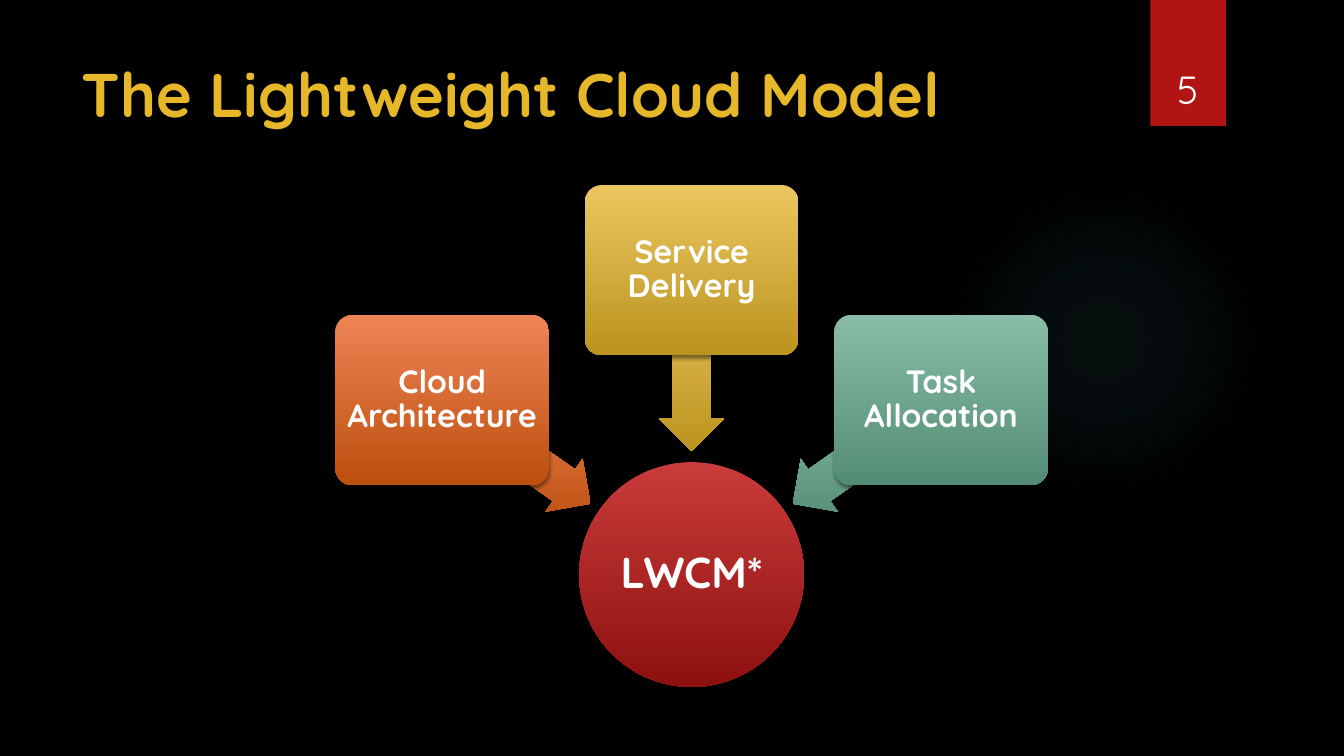
import math

import lxml.etree
import pptx
import pptx.dml.color
import pptx.enum.shapes
import pptx.enum.text
import pptx.oxml.ns
import pptx.util

Inches = pptx.util.Inches
SHAPE = pptx.enum.shapes.MSO_SHAPE
ANCHOR = pptx.enum.text.MSO_ANCHOR
ALIGN = pptx.enum.text.PP_ALIGN
qn = pptx.oxml.ns.qn

FONT = "Quicksand"
WHITE = "FFFFFF"
HUB_X, HUB_Y, HUB_SIZE = 6.86, 5.7, 2.23
BOX_W, BOX_H, BOX_RADIUS = 2.12, 1.69, 3.02
ARROW_W, ARROW_H, ARROW_RADIUS = 1.79, 0.64, 2.12
INPUTS = [
    ("Cloud Architecture", 215, "EE8455", "BC4F0E"),
    ("Service Delivery", 270, "EBC65F", "BB941F"),
    ("Task Allocation", 325, "89BDA7", "538C74"),
]


def rgb(color):
    return pptx.dml.color.RGBColor.from_string(color)


def sub(parent, tag, **attrs):
    return lxml.etree.SubElement(parent, qn(tag), {k: str(v) for k, v in attrs.items()})


def add_shape(slide, kind, x, y, w, h, adjustments=()):
    s = slide.shapes.add_shape(kind, Inches(x), Inches(y), Inches(w), Inches(h))
    for i, value in enumerate(adjustments):
        s.adjustments[i] = value
    s.line.fill.background()
    s.shadow.inherit = False
    return s


def add_centred(slide, kind, cx, cy, w, h, adjustments=()):
    return add_shape(slide, kind, cx - w / 2, cy - h / 2, w, h, adjustments)


def add_shadow(s):
    effects = s._element.spPr.find(qn("a:effectLst"))
    shadow = sub(effects, "a:outerShdw", blurRad=pptx.util.Pt(3),
                 dist=pptx.util.Pt(2), dir=5400000, rotWithShape=0)
    color = sub(shadow, "a:srgbClr", val="000000")
    sub(color, "a:alpha", val=45000)


def start_gradient(s, stops):
    s.fill.gradient()
    grad = s._element.spPr.find(qn("a:gradFill"))
    for child in list(grad):
        grad.remove(child)
    grad.set("rotWithShape", "0")
    stop_list = sub(grad, "a:gsLst")
    for position, color, alpha in stops:
        stop = sub(stop_list, "a:gs", pos=position * 1000)
        sub(sub(stop, "a:srgbClr", val=color), "a:alpha", val=alpha * 1000)
    return grad


def fill_vertical(s, top, bottom):
    grad = start_gradient(s, [(0, top, 100), (100, bottom, 100)])
    sub(grad, "a:lin", ang=5400000, scaled=0)


def fill_radial(s, stops):
    route = sub(start_gradient(s, stops), "a:path", path="circle")
    sub(route, "a:fillToRect", l=50000, t=50000, r=50000, b=50000)


def add_run(p, text, size, color, bold):
    r = p.add_run()
    r.text = text
    r.font.name = FONT
    r.font.size = pptx.util.Pt(size)
    r.font.bold = bold
    r.font.color.rgb = rgb(color)


def add_label(s, text, size, inset):
    tf = s.text_frame
    tf.word_wrap = True
    tf.vertical_anchor = ANCHOR.MIDDLE
    tf.margin_left = tf.margin_right = Inches(inset)
    tf.margin_top = tf.margin_bottom = Inches(inset)
    p = tf.paragraphs[0]
    p.alignment = ALIGN.CENTER
    p.line_spacing = 0.9
    add_run(p, text, size, WHITE, True)


def add_title(slide, text):
    title = slide.shapes.title
    title.left, title.top = Inches(0.71), Inches(0.5)
    title.width, title.height = Inches(10.29), Inches(1.53)
    tf = title.text_frame
    tf.word_wrap = True
    tf.vertical_anchor = ANCHOR.TOP
    p = tf.paragraphs[0]
    p.alignment = ALIGN.LEFT
    add_run(p, text, 44, "E6B729", True)


def add_page_number(slide, number):
    ribbon = add_shape(slide, SHAPE.RECTANGLE, 11.41, 0, 0.75, 1.25)
    ribbon.fill.solid()
    ribbon.fill.fore_color.rgb = rgb("B01513")
    add_shadow(ribbon)
    box = slide.shapes.add_textbox(Inches(11.32), Inches(0.32), Inches(0.92), Inches(0.84))
    tf = box.text_frame
    tf.word_wrap = True
    tf.vertical_anchor = ANCHOR.BOTTOM
    p = tf.paragraphs[0]
    p.alignment = ALIGN.CENTER
    add_run(p, number, 28, WHITE, False)


def add_glow(slide):
    glow = add_shape(slide, SHAPE.OVAL, 9.41, 1.83, 3.08, 3.08)
    fill_radial(glow, [(0, "50B9C1", 7), (36, "50B9C1", 6), (69, "50B9C1", 0)])


def add_hub(slide, text):
    hub = add_centred(slide, SHAPE.OVAL, HUB_X, HUB_Y, HUB_SIZE, HUB_SIZE)
    fill_vertical(hub, "C93B3A", "8D110F")
    add_shadow(hub)
    add_label(hub, text, 31, 0.02)


def around_hub(angle, radius):
    turn = math.radians(angle)
    return HUB_X + radius * math.cos(turn), HUB_Y + radius * math.sin(turn)


def add_input(slide, text, angle, top, bottom):
    arrow = add_centred(slide, SHAPE.LEFT_ARROW, *around_hub(angle, ARROW_RADIUS),
                        ARROW_W, ARROW_H, (0.6, 0.5))
    arrow.rotation = angle
    box = add_centred(slide, SHAPE.ROUNDED_RECTANGLE, *around_hub(angle, BOX_RADIUS),
                      BOX_W, BOX_H, (0.1,))
    for s in (arrow, box):
        fill_vertical(s, top, bottom)
        add_shadow(s)
    add_label(box, text, 23, 0.05)


def main():
    prs = pptx.Presentation()
    prs.slide_width, prs.slide_height = Inches(13.33), Inches(7.5)
    slide = prs.slides.add_slide(prs.slide_layouts[5])
    slide.background.fill.solid()
    slide.background.fill.fore_color.rgb = rgb("000000")
    add_glow(slide)
    add_title(slide, "The Lightweight Cloud Model")
    add_hub(slide, "LWCM*")
    for item in INPUTS:
        add_input(slide, *item)
    add_page_number(slide, "5")
    prs.save("out.pptx")


if __name__ == "__main__":
    main()
